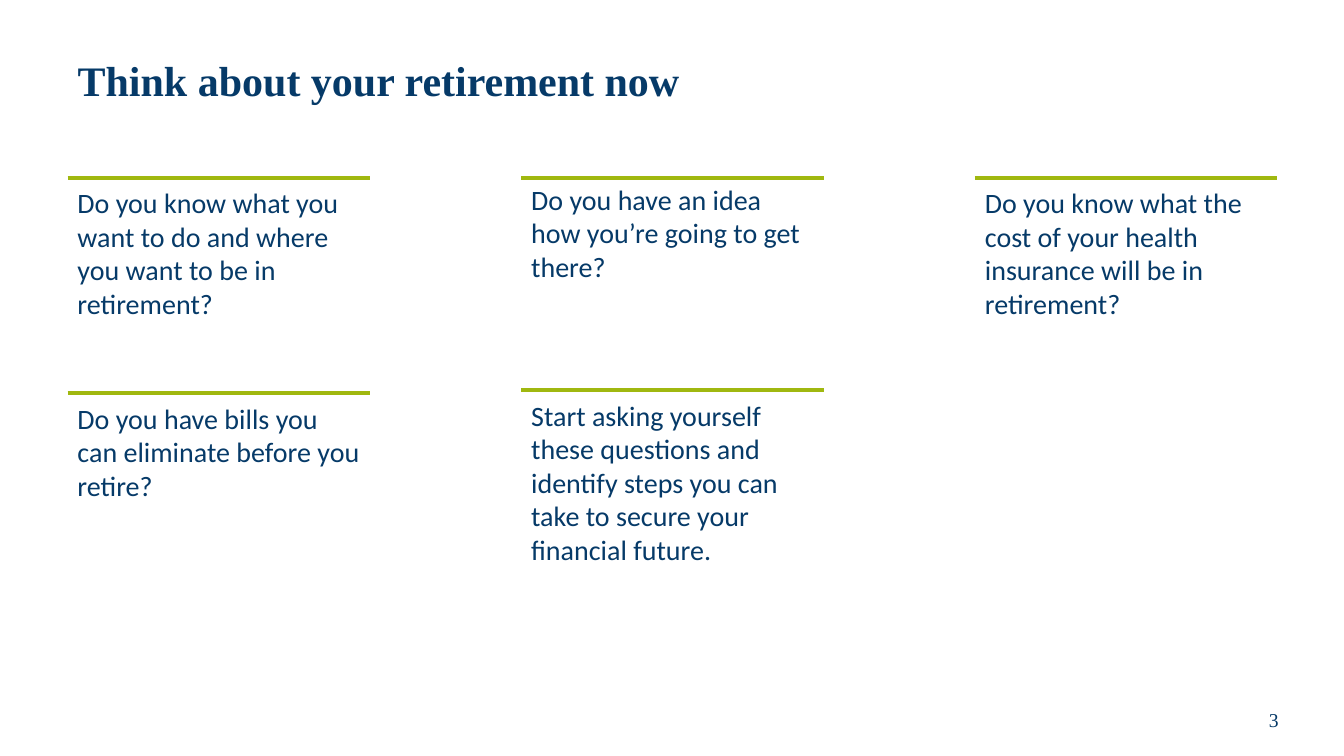
import pptx
import pptx.util
import pptx.dml.color
import pptx.enum.shapes
import pptx.enum.text
import pptx.oxml.ns
from lxml import etree

Inches, Pt = pptx.util.Inches, pptx.util.Pt
ANCHOR, ALIGN = pptx.enum.text.MSO_ANCHOR, pptx.enum.text.PP_ALIGN
NAVY = pptx.dml.color.RGBColor(0x06, 0x3A, 0x68)
GREEN = pptx.dml.color.RGBColor(0xA0, 0xB8, 0x10)
SERIF, SANS = "Times New Roman", "Calibri"

# Question grid, in inches
LEFT, COL_STEP, COL_WIDTH = 0.67, 4.5, 3
# column, rule height, text top, text height, text
QUESTIONS = [
    (0, 1.77, 1.79, 1.45, "Do you know what you want to do and where you want to be in retirement?"),
    (1, 1.77, 1.76, 1.11, "Do you have an idea how you’re going to get there?"),
    (2, 1.77, 1.79, 1.45, "Do you know what the cost of your health insurance will be in retirement?"),
    (0, 3.9, 3.93, 1.11, "Do you have bills you can eliminate before you retire?"),
    (1, 3.87, 3.9, 1.78, "Start asking yourself these questions and identify steps "
                         "you can take to secure your financial future."),
]


def write(sp, text, size, font, anchor=ANCHOR.TOP, align=ALIGN.LEFT, bold=False):
    """Fill a shape with one wrapped navy paragraph."""
    tf = sp.text_frame
    tf.text = text
    tf.word_wrap = True
    tf.vertical_anchor = anchor
    p = tf.paragraphs[0]
    p.alignment = align
    p.font.size, p.font.name, p.font.bold = Pt(size), font, bold
    p.font.color.rgb = NAVY
    return p


def add_title(slide, x, y, w, h, text):
    sp = slide.shapes.title
    sp.left, sp.top, sp.width, sp.height = (Inches(v) for v in (x, y, w, h))
    p = write(sp, text, 30, SERIF, ANCHOR.MIDDLE, bold=True)
    p.line_spacing = 0.9


def add_question(slide, x, w, rule_y, text_y, text_h, text):
    """A question below a green rule, grouped."""
    group = slide.shapes.add_group_shape()
    sp = group.shapes.add_textbox(Inches(x), Inches(text_y), Inches(w), Inches(text_h))
    write(sp, text, 20, SANS)
    rule = group.shapes.add_connector(
        pptx.enum.shapes.MSO_CONNECTOR.STRAIGHT,
        Inches(x), Inches(rule_y), Inches(x + w), Inches(rule_y))
    rule.line.color.rgb = GREEN
    rule.line.width = Pt(3)
    etree.SubElement(rule.element.spPr, pptx.oxml.ns.qn("a:effectLst"))


def add_page_number(slide, x, y, w, h, number):
    sp = slide.shapes.add_textbox(Inches(x), Inches(y), Inches(w), Inches(h))
    write(sp, number, 14, SERIF, ANCHOR.MIDDLE, ALIGN.CENTER)


def main():
    prs = pptx.Presentation()
    prs.slide_width, prs.slide_height = Inches(13.33), Inches(7.5)
    slide = prs.slides.add_slide(prs.slide_layouts.get_by_name("Title Only"))
    add_title(slide, LEFT, 0.25, 12, 1.15, "Think about your retirement now")
    for col, rule_y, text_y, text_h, text in QUESTIONS:
        add_question(slide, LEFT + col * COL_STEP, COL_WIDTH, rule_y, text_y, text_h, text)
    add_page_number(slide, 12.05, 6.89, 1.17, 0.5, "3")
    prs.save("out.pptx")


if __name__ == "__main__":
    main()
